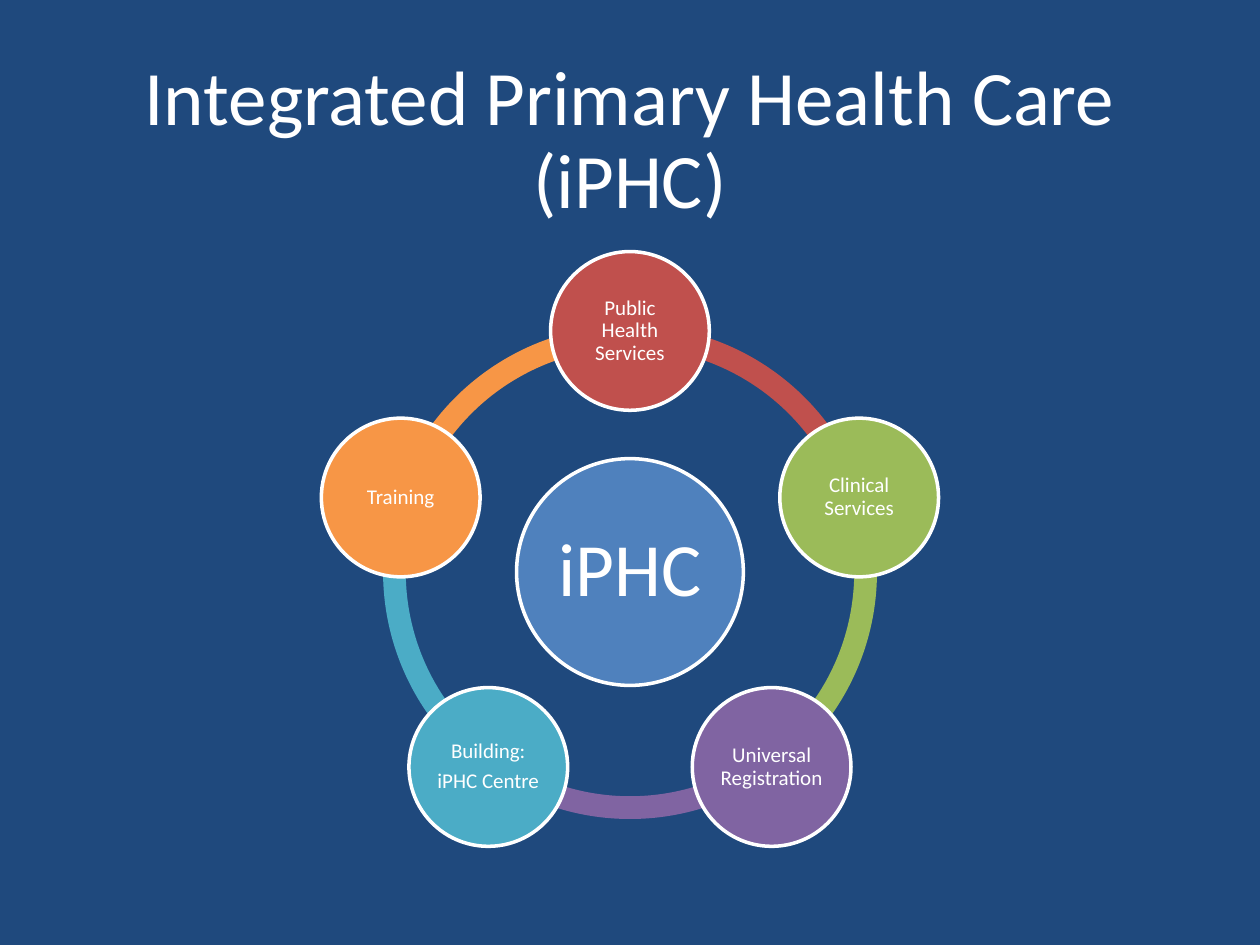
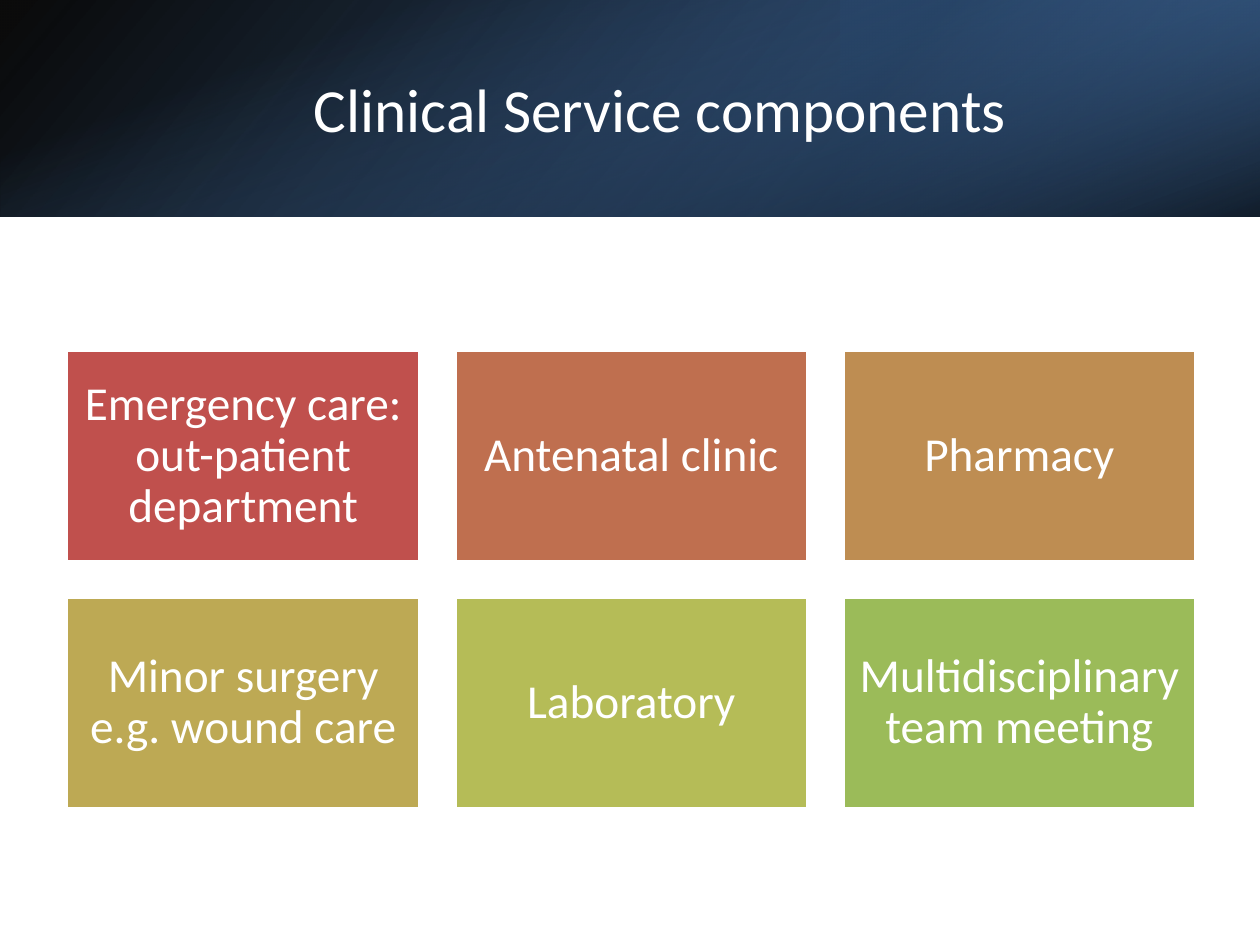
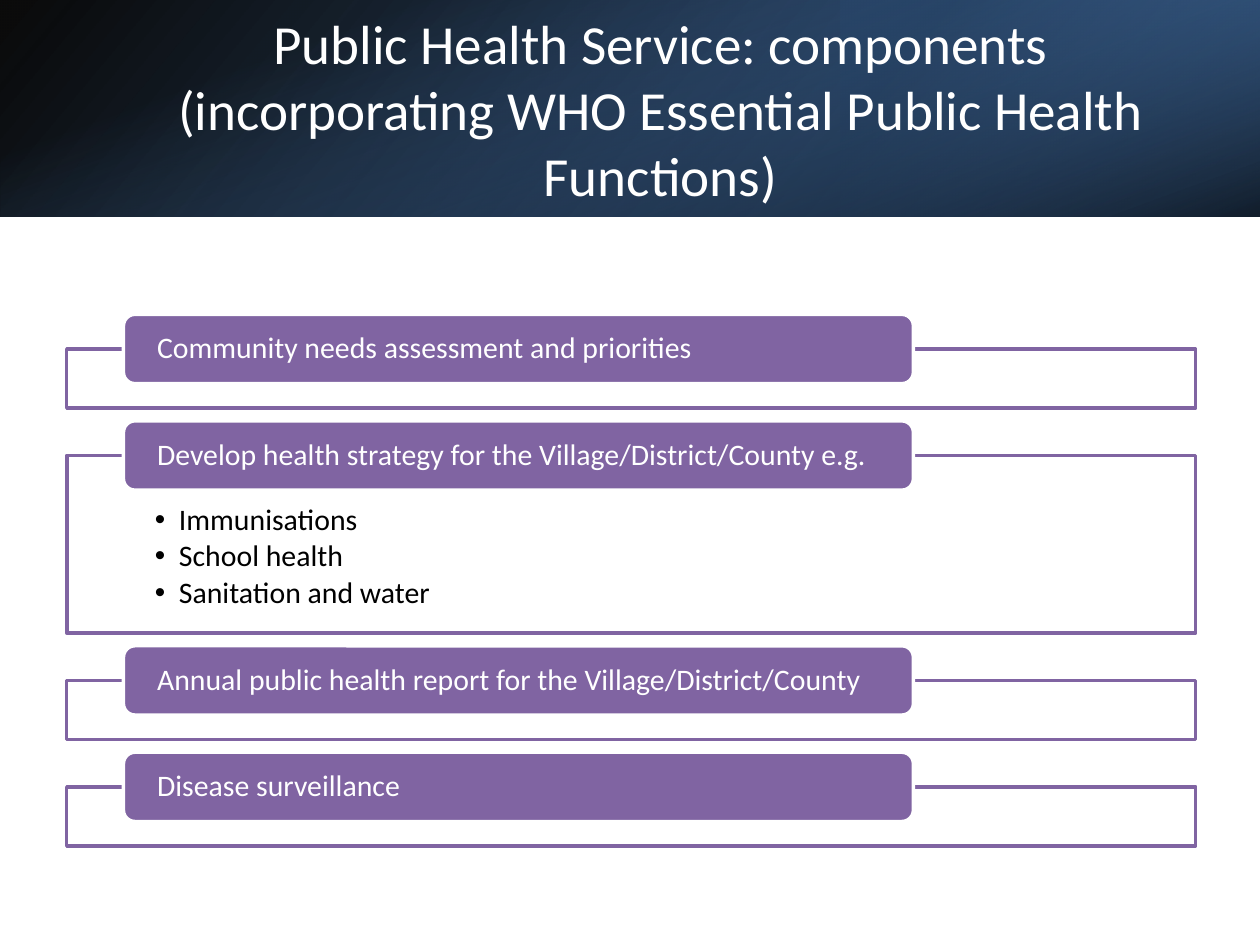
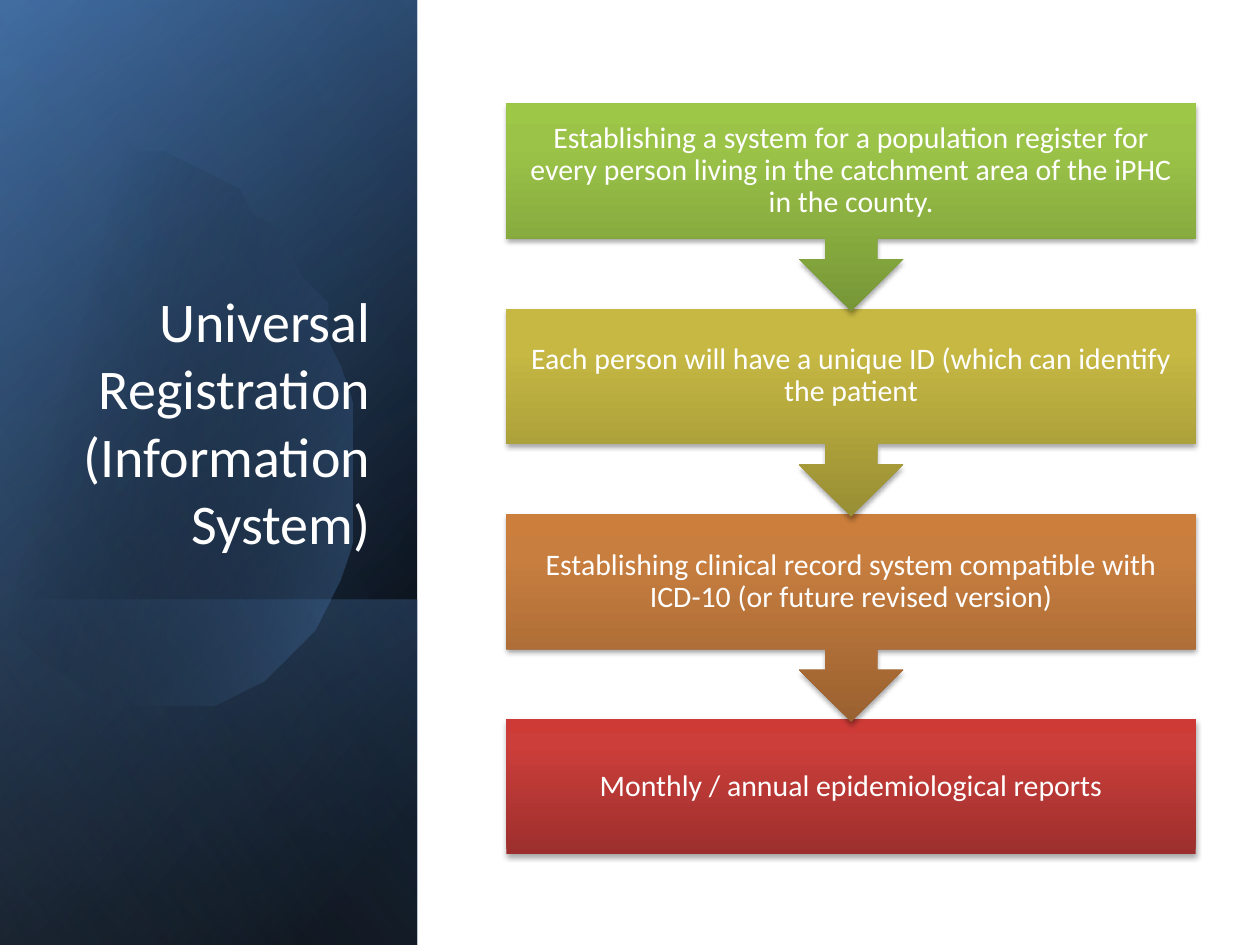
"""Build four slides on integrated primary health care."""
from dataclasses import dataclass
from math import cos, radians, sin
from typing import Any, NamedTuple

from lxml import etree
from pptx import Presentation
from pptx.dml.color import RGBColor
from pptx.enum.shapes import MSO_SHAPE
from pptx.enum.text import MSO_ANCHOR, MSO_AUTO_SIZE, PP_ALIGN
from pptx.oxml.ns import qn
from pptx.util import Inches, Pt

RECT, ROUND_RECT = MSO_SHAPE.RECTANGLE, MSO_SHAPE.ROUNDED_RECTANGLE
OVAL, ARC, CALLOUT = MSO_SHAPE.OVAL, MSO_SHAPE.BLOCK_ARC, MSO_SHAPE.DOWN_ARROW_CALLOUT
LEFT, CENTER, RIGHT = PP_ALIGN.LEFT, PP_ALIGN.CENTER, PP_ALIGN.RIGHT
TOP, MIDDLE, BOTTOM = MSO_ANCHOR.TOP, MSO_ANCHOR.MIDDLE, MSO_ANCHOR.BOTTOM

SLIDE_W, SLIDE_H = Inches(10), Inches(7.5)
COLS, ROWS = 100, 75
COL, ROW = SLIDE_W / COLS, SLIDE_H / ROWS
TITLE_ONLY, TITLE_AND_BODY = 5, 1

FONT = "Calibri"
WHITE, BLACK, NAVY = "FFFFFF", "000000", "1F497D"
BLUE, RED, GREEN = "4F81BD", "C0504D", "9BBB59"
PURPLE, TEAL, ORANGE = "8064A2", "4BACC6", "F79646"
DEEP_BLUE, DARK_BLUE, PALE_BLUE = "376092", "254061", "95B3D7"


class Frame(NamedTuple):
    """A box in grid columns and rows."""
    col: float
    row: float
    cols: float
    rows: float


class Stop(NamedTuple):
    """One gradient stop, with its opacity in percent."""
    at: int
    color: str
    opacity: int = 100


@dataclass(frozen=True)
class TextStyle:
    """How the paragraphs of one box look."""
    size: float
    color: str = WHITE
    align: Any = CENTER
    anchor: Any = MIDDLE
    insets: tuple[float, float, float, float] = (0.1, 0.05, 0.1, 0.05)
    spacing: float = 0.9
    after: float = 0.35
    bullet: bool = False


@dataclass(frozen=True)
class Panel:
    """A gradient rectangle, given by the area it covers when turned."""
    area: Frame
    stops: tuple[Stop, ...]
    angle: int
    turn: int = 0
    flip: bool = True


class Node(NamedTuple):
    """A circle on the ring."""
    color: str
    lines: tuple[str, ...]


class Section(NamedTuple):
    """A headed frame with an optional list."""
    heading: str
    items: tuple[str, ...]
    rows: float


class Step(NamedTuple):
    """A step of the registration flow, shaded from dark to bright."""
    text: str
    shades: tuple[str, str, str]


HEADER = Frame(0, 0, COLS, 17.2)
SIDE = Frame(0, 0, 33.1, ROWS)
HEADER_PANELS = (
    Panel(HEADER, (Stop(0, BLACK, 96), Stop(100, DEEP_BLUE)), 140),
    Panel(Frame(66.7, 0, 33.3, 17.2), (Stop(19, DARK_BLUE, 68), Stop(100, BLUE, 79)), 320, 180),
    Panel(HEADER, (Stop(23, BLUE, 0), Stop(99, BLACK, 74)), 340, 90, False),
)
SIDE_PANELS = (
    Panel(SIDE, (Stop(8, BLACK), Stop(100, DEEP_BLUE)), 50, 90),
    Panel(SIDE, (Stop(0, BLACK, 0), Stop(99, BLUE, 46)), 30, 90),
    Panel(Frame(0, 47.6, 33.1, 27.4), (Stop(2, BLUE, 29), Stop(100, BLACK, 30)), 130, 90),
)
SIDE_SHEEN = Panel(SIDE, (Stop(0, BLACK, 0), Stop(99, PALE_BLUE, 11)), 120, 90)
GLOW_STOPS = (Stop(29, BLACK, 0), Stop(100, BLUE, 43))
GLOW_START = (9.6, 11.4)
GLOW_CURVES = (
    ((17.1, 12.2), (24.4, 19.2), (27.3, 29)),
    ((30.7, 41.2), (26.2, 53.1), (17.1, 55.7)),
    ((11.4, 57.4), (5.3, 55), (0.7, 50)),
    ((-0.3, 48.8), (-2.5, 16.6), (-1.5, 15.4)),
    ((0.2, 13.7), (2.2, 12.5), (4.5, 11.8)),
    ((6.2, 11.3), (7.9, 11.2), (9.6, 11.4)),
)

NODES = (
    Node(RED, ("Public Health Services",)),
    Node(GREEN, ("Clinical Services",)),
    Node(PURPLE, ("Universal Registration",)),
    Node(TEAL, ("Building:", "iPHC Centre")),
    Node(ORANGE, ("Training",)),
)
CLINICAL_TILES = (
    ("Emergency care: out-patient department", RED),
    ("Antenatal clinic", "BF6F4F"),
    ("Pharmacy", "BE8D52"),
    ("Minor surgery e.g. wound care", "BDA954"),
    ("Laboratory", "B5BC57"),
    ("Multidisciplinary team meeting", GREEN),
)
SECTIONS = (
    Section("Community needs assessment and priorities", (), 4.7),
    Section("Develop health strategy for the Village/District/County e.g.",
            ("Immunisations", "School health", "Sanitation and water"), 14.1),
    Section("Annual public health report for the Village/District/County", (), 4.7),
    Section("Disease surveillance", (), 4.7),
)
STEPS = (
    Step("Establishing a system for a population register for every person living "
         "in the catchment area of the iPHC in the county.", ("779737", "9BC348", "9DC746")),
    Step("Each person will have a unique ID (which can identify the patient",
         ("988E34", "C6B843", "C9BB41")),
    Step("Establishing clinical record system compatible with ICD-10 "
         "(or future revised version)", ("9A6130", "C87E3F", "CC7E3C")),
    Step("Monthly / annual epidemiological reports", ("9C2F2D", "CB3E3A", "CE3B37")),
)


def rgb(color: str) -> RGBColor:
    """Turn a hex string into a colour."""
    return RGBColor.from_string(color)


def apply(target: Any, formats: dict[str, Any]) -> None:
    """Set every named attribute on the target."""
    for name, value in formats.items():
        setattr(target, name, value)


def emu(frame: Frame) -> tuple[int, int, int, int]:
    """Convert a grid frame to left, top, width and height."""
    return (round(frame.col * COL), round(frame.row * ROW),
            round(frame.cols * COL), round(frame.rows * ROW))


def around(col: float, row: float, size: float) -> Frame:
    """Give the square frame centred on a point."""
    return Frame(col - size / 2, row - size / 2, size, size)


def sub(parent: Any, tag: str, **attributes: Any) -> Any:
    """Append a drawing element with attributes."""
    names = {key: str(value) for key, value in attributes.items()}
    return etree.SubElement(parent, qn(tag), names)


def write(tf: Any, lines: tuple[str, ...], style: TextStyle) -> None:
    """Write one paragraph for each line."""
    margins = zip(("margin_left", "margin_top", "margin_right", "margin_bottom"), style.insets)
    apply(tf, {"word_wrap": True, "auto_size": MSO_AUTO_SIZE.NONE, "vertical_anchor": style.anchor})
    apply(tf, {name: Inches(value) for name, value in margins})
    for i, line in enumerate(lines):
        p = tf.add_paragraph() if i else tf.paragraphs[0]
        if style.bullet:
            p.level = 1
            pPr = p._p.get_or_add_pPr()
            pPr.set("marL", str(Inches(0.19)))
            pPr.set("indent", str(-Inches(0.19)))
            sub(pPr, "a:buFont", typeface="Arial")
            sub(pPr, "a:buChar", char="•")
        last = i == len(lines) - 1
        apply(p, {"alignment": style.align, "line_spacing": style.spacing, "space_before": Pt(0),
                  "space_after": Pt(0 if last else round(style.size * style.after, 1))})
        r = p.add_run()
        r.text = line
        apply(r.font, {"name": FONT, "size": Pt(style.size)})
        r.font.color.rgb = rgb(style.color)


def paint(sp: Any, fill: str | None = None, line: str | None = None) -> None:
    """Give a shape a plain fill and a two-point outline, or none."""
    if fill:
        sp.fill.solid()
        sp.fill.fore_color.rgb = rgb(fill)
    if line:
        sp.line.color.rgb = rgb(line)
        sp.line.width = Pt(2)
    else:
        sp.line.fill.background()


def shade(sp: Any, stops: tuple[Stop, ...], angle: int) -> None:
    """Fill a shape with a linear gradient, the angle counted clockwise."""
    sp.fill.gradient()
    sp.fill.gradient_angle = -angle % 360
    gs_lst = sp.element.spPr.find(qn("a:gradFill")).find(qn("a:gsLst"))
    for gs in list(gs_lst):
        gs_lst.remove(gs)
    for stop in stops:
        gs = sub(gs_lst, "a:gs", pos=stop.at * 1000)
        color = sub(gs, "a:srgbClr", val=stop.color)
        if stop.opacity < 100:
            sub(color, "a:alpha", val=stop.opacity * 1000)


def add_shape(s: Any, kind: Any, frame: Frame, fill: str | None = None,
              line: str | None = None) -> Any:
    """Add a preset shape without a shadow."""
    sp = s.shapes.add_shape(kind, *emu(frame))
    sp.shadow.inherit = False
    paint(sp, fill, line)
    return sp


def add_panel(s: Any, panel: Panel) -> None:
    """Add a gradient panel, turned about its centre."""
    col, row, cols, rows = panel.area
    frame = panel.area
    if panel.turn == 90:
        frame = Frame(col + (cols - rows) / 2, row + (rows - cols) / 2, rows, cols)
    sp = add_shape(s, RECT, frame)
    sp.rotation = panel.turn
    if panel.flip:
        sp.element.spPr.find(qn("a:xfrm")).set("flipH", "1")
    shade(sp, panel.stops, panel.angle)


def add_glow(s: Any) -> None:
    """Add the tilted oval glow of the side panel."""
    points, start, samples = [], GLOW_START, 12
    for c1, c2, end in GLOW_CURVES:
        for t in (i / samples for i in range(1, samples + 1)):
            weights = ((1 - t) ** 3, 3 * t * (1 - t) ** 2, 3 * t * t * (1 - t), t ** 3)
            points.append(tuple(sum(w * q[axis] for w, q in zip(weights, (start, c1, c2, end)))
                                for axis in (0, 1)))
        start = end
    builder = s.shapes.build_freeform(*GLOW_START, scale=COL)
    builder.add_line_segments(points, close=True)
    sp = builder.convert_to_shape()
    sp.shadow.inherit = False
    paint(sp)
    shade(sp, GLOW_STOPS, 14)


def fill_placeholder(s: Any, sp: Any, frame: Frame, lines: tuple[str, ...],
                     style: TextStyle) -> None:
    """Move a placeholder to the front and into its frame, and write it."""
    s.shapes.element.append(sp.element)
    apply(sp, dict(zip(("left", "top", "width", "height"), emu(frame))))
    write(sp.text_frame, lines, style)


def add_slide(prs: Any, layout: int = TITLE_ONLY) -> Any:
    """Add a slide with one of the template's layouts."""
    return prs.slides.add_slide(prs.slide_layouts[layout])


def add_header(s: Any, title: str, size: float) -> None:
    """Draw the header band and its title."""
    for panel in HEADER_PANELS:
        add_panel(s, panel)
    fill_placeholder(s, s.shapes.title, Frame(11.2, 3.8, 82.4, 9.6), (title,),
                     TextStyle(size, spacing=1.0))


def build_overview(prs: Any) -> None:
    """Build the ring of service areas."""
    s = add_slide(prs)
    s.background.fill.solid()
    s.background.fill.fore_color.rgb = rgb(NAVY)
    fill_placeholder(s, s.shapes.title, Frame(6.9, 4, 86.2, 14.5),
                     ("Integrated Primary Health Care (iPHC)",), TextStyle(44))
    center, radius, sweep = (50, 45.4), 19.13, 360 / len(NODES)
    angles = [(270 + i * sweep) % 360 for i in range(len(NODES))]
    for node, angle in reversed(list(zip(NODES, angles))):
        arc = add_shape(s, ARC, around(*center, 39.2), node.color)
        for i, value in enumerate((angle * 0.6, (angle + sweep) % 360 * 0.6, 0.046)):
            arc.adjustments[i] = value
    hub = add_shape(s, OVAL, around(*center, 18), BLUE, WHITE)
    write(hub.text_frame, ("iPHC",), TextStyle(43, insets=(0.06,) * 4))
    for node, angle in zip(NODES, angles):
        col = center[0] + radius * cos(radians(angle))
        row = center[1] + radius * sin(radians(angle))
        circle = add_shape(s, OVAL, around(col, row, 12.6), node.color, WHITE)
        write(circle.text_frame, node.lines, TextStyle(12, insets=(0.02,) * 4))


def build_clinical(prs: Any) -> None:
    """Build the grid of clinical services."""
    s = add_slide(prs)
    add_header(s, "Clinical Service components", 35)
    for i, (text, color) in enumerate(CLINICAL_TILES):
        row, col = divmod(i, 3)
        tile = add_shape(s, RECT, Frame(5.3 + 30.8 * col, 27.8 + 19.6 * row, 28, 16.8),
                         color, WHITE)
        write(tile.text_frame, (text,), TextStyle(27, insets=(0.11,) * 4))


def build_public_health(prs: Any) -> None:
    """Build the headed frames of the public health service."""
    s = add_slide(prs, TITLE_AND_BODY)
    add_header(s, "Public Health Service: components (incorporating WHO Essential "
                  "Public Health Functions)", 31.5)
    heading_style = TextStyle(17, align=LEFT, insets=(0.24, 0, 0.24, 0))
    list_style = TextStyle(17, BLACK, LEFT, TOP, (0.7, 0.39, 0.7, 0.13), after=0.15, bullet=True)
    row, gap = 27.7, 3.75
    for section in SECTIONS:
        frame = Frame(5.3, row, 89.6, section.rows)
        if section.items:
            body = s.placeholders[1]
            fill_placeholder(s, body, frame, section.items, list_style)
            paint(body, WHITE, PURPLE)
        else:
            add_shape(s, RECT, frame, WHITE, PURPLE)
        heading = add_shape(s, ROUND_RECT, Frame(9.8, row - 2.75, 62.7, 5.5), PURPLE, WHITE)
        write(heading.text_frame, (section.heading,), heading_style)
        row += section.rows + gap


def build_registration(prs: Any) -> None:
    """Build the flow of universal registration."""
    s = add_slide(prs)
    for panel in SIDE_PANELS:
        add_panel(s, panel)
    add_glow(s)
    add_panel(s, SIDE_SHEEN)
    fill_placeholder(s, s.shapes.title, Frame(4.8, 18.4, 25.6, 26.2),
                     ("Universal Registration (Information System)",),
                     TextStyle(32, align=RIGHT, anchor=BOTTOM, spacing=1.0))
    for i, step in reversed(list(enumerate(STEPS))):
        last = i == len(STEPS) - 1
        sp = add_shape(s, RECT if last else CALLOUT,
                       Frame(40.2, 8.2 + 16.3 * i, 54.7, 10.7 if last else 16.5))
        shade(sp, tuple(map(Stop, (0, 80, 100), step.shades)), 270)
        shadow = sub(sp.element.spPr.find(qn("a:effectLst")), "a:outerShdw", blurRad=Pt(3.1),
                     dist=Pt(1.8), dir=90 * 60000, rotWithShape=0)
        sub(sub(shadow, "a:srgbClr", val=BLACK), "a:alpha", val=35000)
        write(sp.text_frame, (step.text,), TextStyle(17, insets=(0.13,) * 4))


def main() -> None:
    """Build and save the presentation."""
    prs = Presentation()
    apply(prs, {"slide_width": SLIDE_W, "slide_height": SLIDE_H})
    for build in (build_overview, build_clinical, build_public_health, build_registration):
        build(prs)
    prs.save("out.pptx")


if __name__ == "__main__":
    main()
